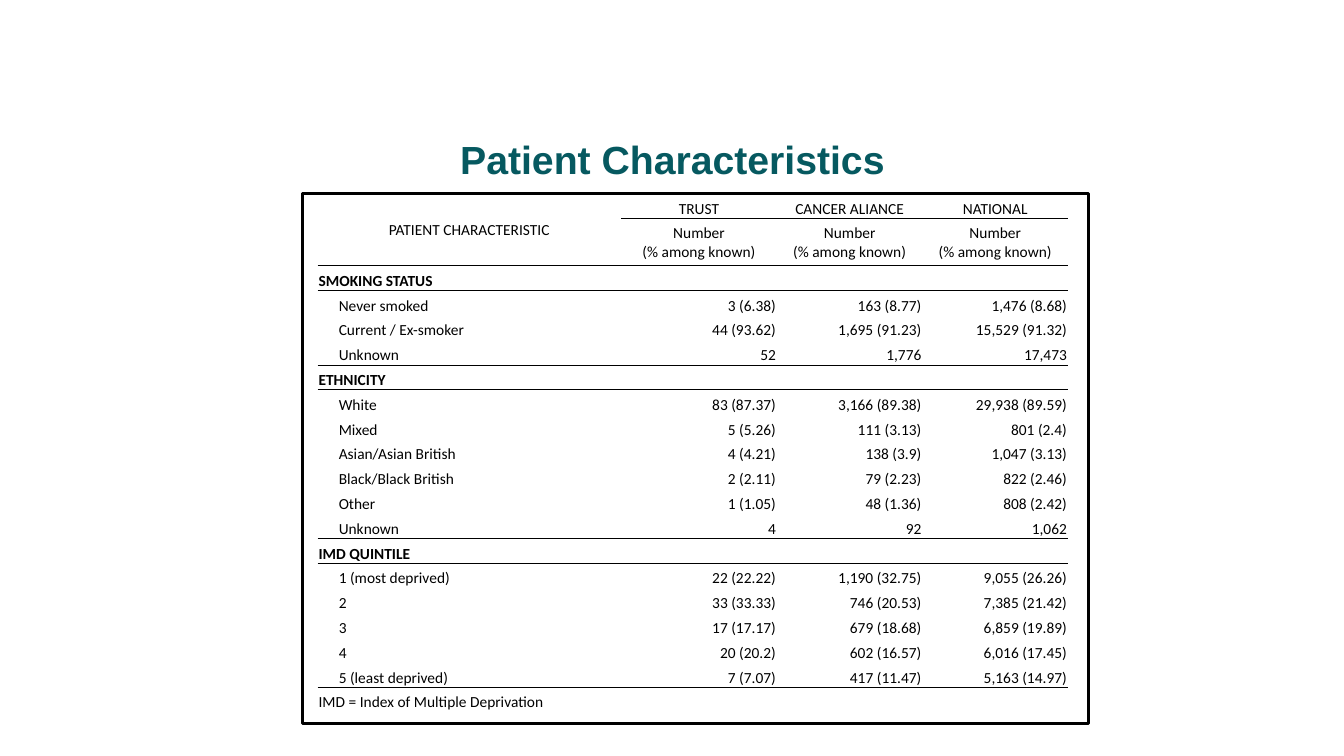
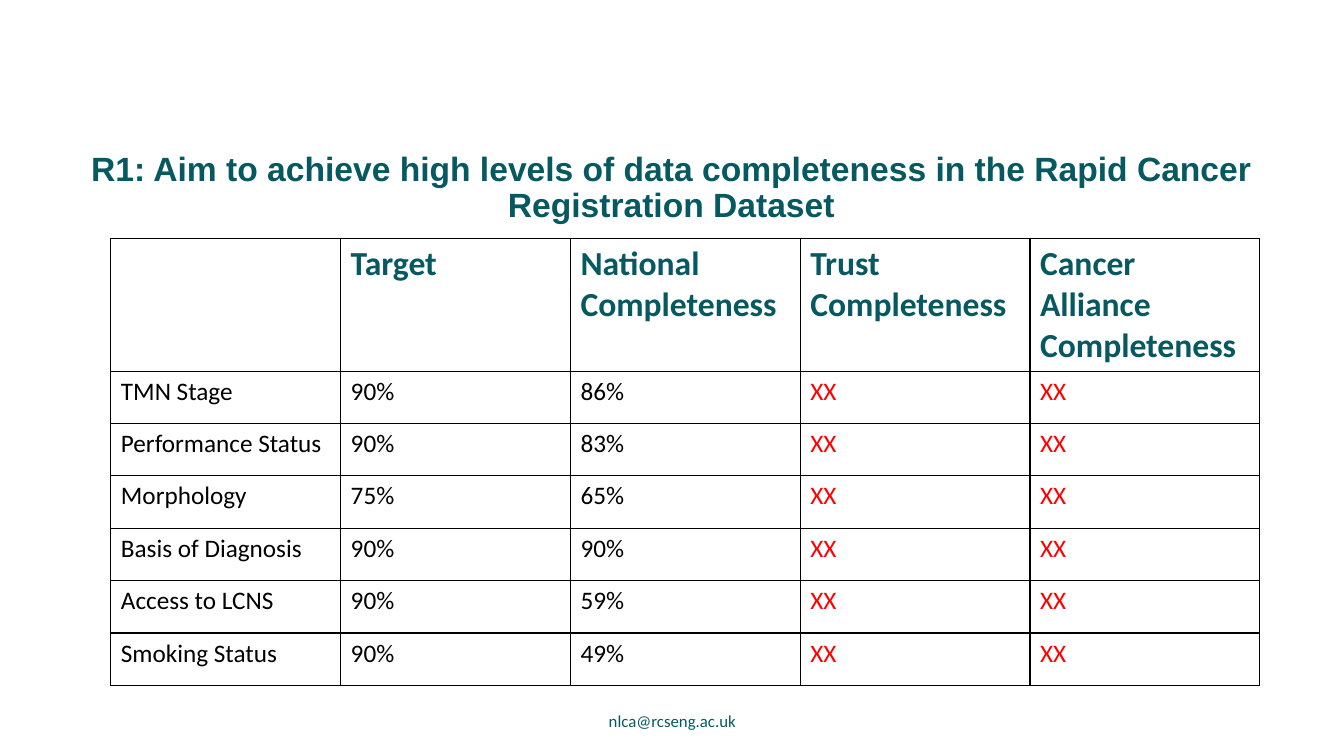
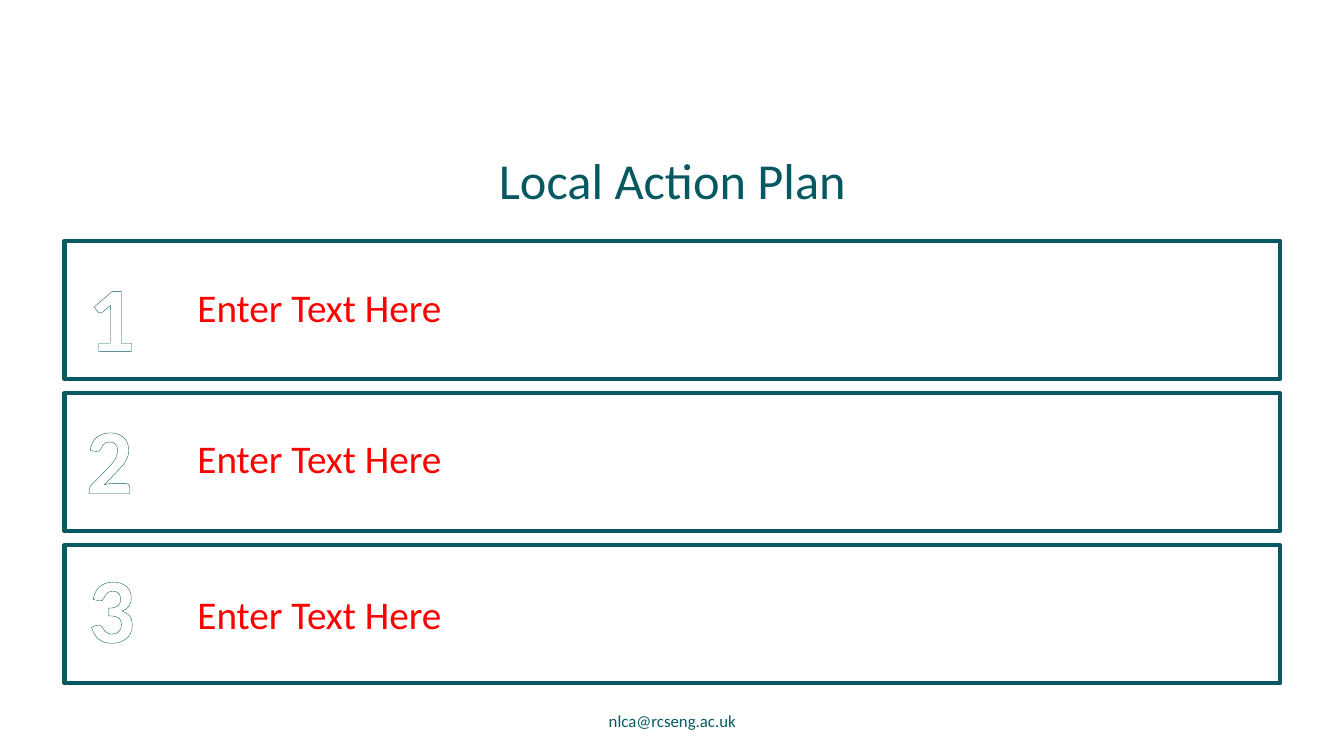
from lxml.etree import SubElement
from pptx import Presentation
from pptx.dml.color import RGBColor
from pptx.enum.shapes import MSO_SHAPE
from pptx.enum.text import MSO_ANCHOR, PP_ALIGN
from pptx.oxml.ns import qn
from pptx.util import Inches, Pt

TEAL = RGBColor(0x06, 0x59, 0x60)
BLACK = RGBColor(0, 0, 0)
WHITE = RGBColor(0xFF, 0xFF, 0xFF)
RED = RGBColor(0xFF, 0, 0)
NO_STYLE = "{2D5ABB26-0587-4C30-8999-92F81FD0307C}"

TITLE = {"name": "Arial", "size": Pt(28), "bold": True}
SUBTITLE = {**TITLE, "size": Pt(24)}
PLAN_TITLE = {"name": "Calibri", "size": Pt(36)}
FOOTER = {"name": "Calibri", "size": Pt(12)}
SMALL = {"name": "Calibri", "size": Pt(11), "bold": False}
SECTION = {**SMALL, "bold": True}
HEADING = {"name": "Calibri", "size": Pt(24), "bold": True}
BODY = {"name": "Calibri", "size": Pt(18), "bold": False}
DIGIT = {"name": "Calibri", "size": Pt(66), "bold": True}
ENTRY = {"name": "Calibri", "size": Pt(28)}

prs = Presentation()
prs.slide_width, prs.slide_height = Inches(13.33), Inches(7.5)
COL, ROW = prs.slide_width / 100, prs.slide_height / 100


def put(tf, text, fmt, color, align=None):
    """Write one formatted paragraph into a text frame and return it."""
    p = tf.paragraphs[0]
    p.text = text
    p.alignment = align
    for r in p.runs:
        r.font.color.rgb = color
        for key, value in fmt.items():
            setattr(r.font, key, value)
    return p


def place(x, y, w, h):
    """Turn percentages of the slide into left, top, width and height."""
    return int(x * COL), int(y * ROW), int(w * COL), int(h * ROW)


# Titles and footers
slides = []
for text, fmt, box, spacing in [
    ("Patient Characteristics", TITLE, (4.28, 18.4, 91.5, 11.33), 0.9),
    ("R1: Aim to achieve high levels of data completeness in the Rapid Cancer "
     "Registration Dataset", SUBTITLE, (4.2, 19.33, 91.5, 11.33), 0.9),
    ("Local Action Plan", PLAN_TITLE, (6.9, 17.73, 86.25, 11.33), 1.07),
]:
    s = prs.slides.add_slide(prs.slide_layouts[6])
    tf = s.shapes.add_textbox(*place(*box)).text_frame
    tf.word_wrap = True
    tf.vertical_anchor = MSO_ANCHOR.MIDDLE
    p = put(tf, text, fmt, TEAL, PP_ALIGN.CENTER)
    p.line_spacing = spacing
    if slides:
        footer = s.shapes.add_textbox(*place(33.15, 92.67, 33.75, 5.33)).text_frame
        footer.word_wrap = True
        footer.vertical_anchor = MSO_ANCHOR.MIDDLE
        put(footer, "nlca@rcseng.ac.uk", FOOTER, TEAL, PP_ALIGN.CENTER)
    else:
        tf.vertical_anchor = MSO_ANCHOR.TOP
        tf.margin_top = Inches(0.02)
    slides.append(s)
patients, completeness, plan = slides
pPr = p._p.get_or_add_pPr()
pPr.set("marL", str(Inches(0.24)))
pPr.set("indent", str(-Inches(0.24)))

# Framed boxes: one around the patient table, three for the action plan
BAR_TOP, BAR_PITCH = 31.87, 20.13
frames = [(patients, (22.5, 25.6, 58.5, 70.13), BLACK, 2.25)]
frames += [(plan, (4.8, BAR_TOP + i * BAR_PITCH, 90.45, 18.27), TEAL, 3) for i in range(3)]
for s, box, color, width in frames:
    sp = s.shapes.add_shape(MSO_SHAPE.RECTANGLE, *place(*box))
    sp.shadow.inherit = False
    sp.fill.solid()
    sp.fill.fore_color.rgb = WHITE
    sp.line.color.rgb = color
    sp.line.width = Pt(width)

# Tables
NUMBER = "Number\n(% among known)"
patient_rows = [
    ("PATIENT CHARACTERISTIC", "TRUST", "CANCER ALIANCE", "NATIONAL"),
    ("", NUMBER, NUMBER, NUMBER),
    ("SMOKING STATUS", "", "", ""),
    ("Never smoked", "3 (6.38)", "163 (8.77)", "1,476 (8.68)"),
    ("Current / Ex-smoker", "44 (93.62)", "1,695 (91.23)", "15,529 (91.32)"),
    ("Unknown", "52", "1,776", "17,473"),
    ("ETHNICITY", "", "", ""),
    ("White", "83 (87.37)", "3,166 (89.38)", "29,938 (89.59)"),
    ("Mixed", "5 (5.26)", "111 (3.13)", "801 (2.4)"),
    ("Asian/Asian British", "4 (4.21)", "138 (3.9)", "1,047 (3.13)"),
    ("Black/Black British", "2 (2.11)", "79 (2.23)", "822 (2.46)"),
    ("Other", "1 (1.05)", "48 (1.36)", "808 (2.42)"),
    ("Unknown", "4", "92", "1,062"),
    ("IMD QUINTILE", "", "", ""),
    ("1 (most deprived)", "22 (22.22)", "1,190 (32.75)", "9,055 (26.26)"),
    ("2", "33 (33.33)", "746 (20.53)", "7,385 (21.42)"),
    ("3", "17 (17.17)", "679 (18.68)", "6,859 (19.89)"),
    ("4", "20 (20.2)", "602 (16.57)", "6,016 (17.45)"),
    ("5 (least deprived)", "7 (7.07)", "417 (11.47)", "5,163 (14.97)"),
    ("IMD = Index of Multiple Deprivation", "", "", ""),
]
target_rows = [("", "Target", "National Completeness", "Trust Completeness",
                "Cancer Alliance Completeness")]
target_rows += [(name, target, national, "XX", "XX") for name, target, national in [
    ("TMN Stage", "90%", "86%"),
    ("Performance Status", "90%", "83%"),
    ("Morphology", "75%", "65%"),
    ("Basis of Diagnosis", "90%", "90%"),
    ("Access to LCNS", "90%", "59%"),
    ("Smoking Status", "90%", "49%"),
]]
last = len(patient_rows) - 1
sections = [i for i, row in enumerate(patient_rows) if not row[1] and i < last]
ruled_above = [0, 1, *sections, last]

for s, rows, box, widths, tall_row, tall in [
    (patients, patient_rows, (23.63, 25.6, 55.84, 68.67), (22.58, 11.6, 10.83, 10.83), 1, 6.27),
    (completeness, target_rows, (8.25, 31.6, 85.5, 59.07), [17.1] * 5, 0, 17.49),
]:
    table = s.shapes.add_table(len(rows), len(widths), *place(*box)).table
    table.first_row = table.horz_banding = False
    table._tbl.tblPr.find(qn("a:tableStyleId")).text = NO_STYLE
    for column, width in zip(table.columns, widths):
        column.width = int(width * COL)
    for i, row in enumerate(table.rows):
        row.height = int(ROW * (tall if i == tall_row else (box[3] - tall) / (len(rows) - 1)))
    if s is patients:
        table.cell(0, 0).merge(table.cell(1, 0))

    for i, row in enumerate(rows):
        for j, text in enumerate(row):
            cell = table.cell(i, j)
            if s is patients:
                header = i < 2
                indented = j == 0 and not header and i not in sections and i != last
                cell.margin_left = Inches(0.21 if indented else 0.01)
                cell.margin_right = cell.margin_top = Inches(0.01)
                cell.margin_bottom = 0
                middle = i == 1 or (i, j) == (0, 0)
                cell.vertical_anchor = MSO_ANCHOR.MIDDLE if middle else MSO_ANCHOR.BOTTOM
                align = PP_ALIGN.CENTER if header else PP_ALIGN.RIGHT if j else None
                fmt, color = SECTION if i in sections else SMALL, BLACK
                sides = "T" * (i in ruled_above) + "B" * (i + 1 in ruled_above)
                if j == 0 and header:
                    sides = "TB"
                line_width = Pt(0.5)
            else:
                align, sides, line_width = None, "LRTB", Pt(1)
                fmt = BODY if i else HEADING
                color = TEAL if i == 0 else RED if j > 2 else BLACK
            p = put(cell.text_frame, text, fmt, color, align)
            if not text:
                p._p.get_or_add_endParaRPr().set("sz", str(int(fmt["size"].pt * 100)))
            tcPr = cell._tc.get_or_add_tcPr()
            for side in sides:
                ln = SubElement(tcPr, qn("a:ln" + side), w=str(line_width))
                SubElement(SubElement(ln, qn("a:solidFill")), qn("a:srgbClr"), val=str(BLACK))
            cell.fill.background()

# Action plan entries
for i, (digit_x, digit_y, entry_y) in enumerate(
        [(5.78, 33.6, 36.8), (5.63, 52.4, 56.8), (5.78, 72.13, 77.47)]):
    tf = plan.shapes.add_textbox(*place(digit_x, digit_y, 5.03, 16.13)).text_frame
    tf.word_wrap = False
    p = put(tf, str(i + 1), DIGIT, WHITE, PP_ALIGN.CENTER)
    rPr = p.runs[0]._r.get_or_add_rPr()
    ln = SubElement(rPr, qn("a:ln"), w=str(Pt(2.25)))
    SubElement(SubElement(ln, qn("a:solidFill")), qn("a:srgbClr"), val=str(TEAL))
    rPr.insert(0, ln)
    tf = plan.shapes.add_textbox(*place(13.95, entry_y, 76.73, 7.6)).text_frame
    tf.word_wrap = True
    put(tf, "Enter Text Here", ENTRY, RED)

prs.save("out.pptx")
